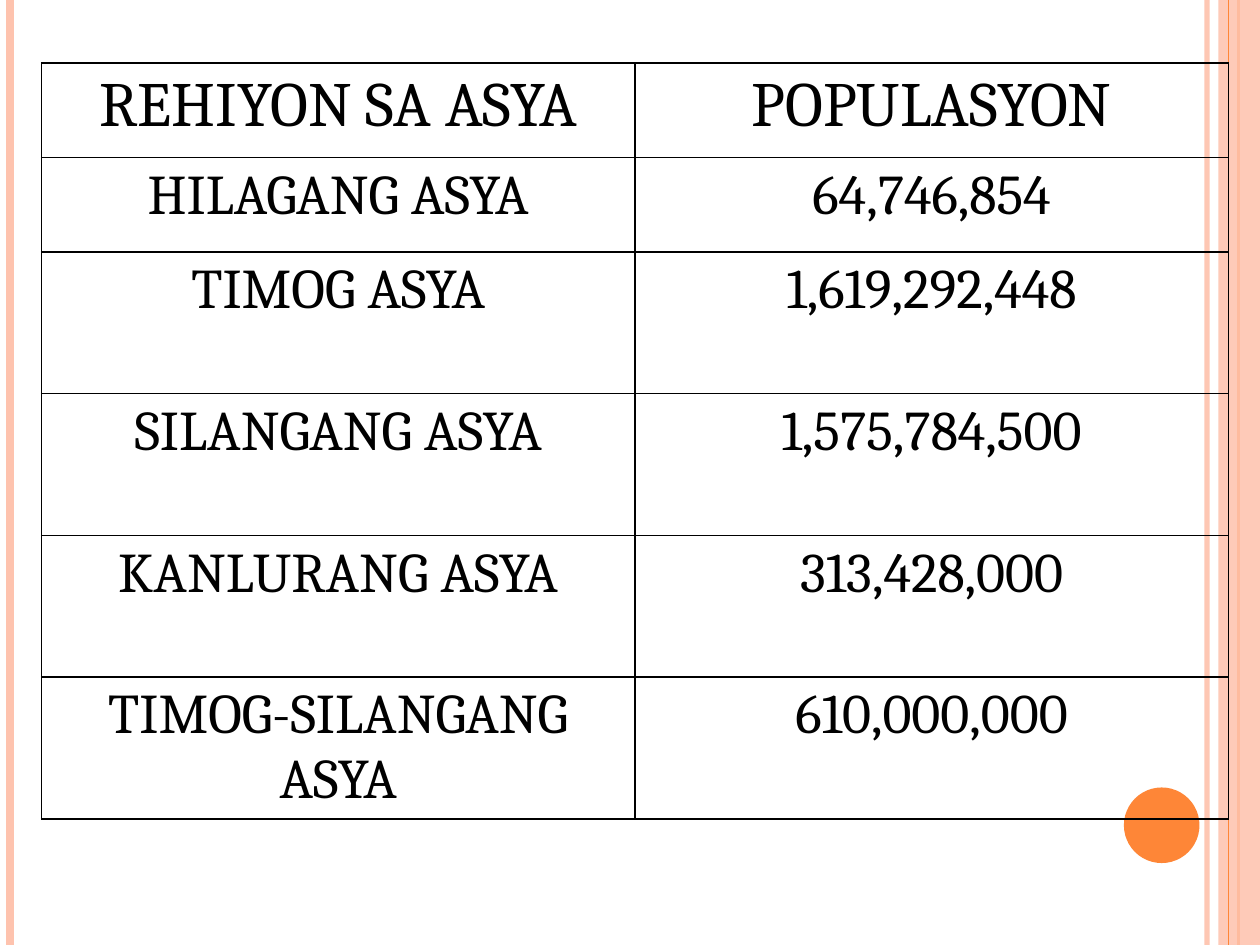
import pptx
import pptx.util
from lxml import etree
from pptx.dml.color import RGBColor
from pptx.enum.shapes import MSO_CONNECTOR, MSO_SHAPE
from pptx.enum.text import PP_ALIGN
from pptx.oxml.ns import qn
from pptx.util import Inches, Pt

PEACH = RGBColor(0xFE, 0xC3, 0xAE)
ORANGE = RGBColor(0xFE, 0x86, 0x37)
BLACK = RGBColor(0, 0, 0)

POPULATION = [
    ("REHIYON SA ASYA", "POPULASYON"),
    ("HILAGANG ASYA", "64,746,854"),
    ("TIMOG ASYA", "1,619,292,448"),
    ("SILANGANG ASYA", "1,575,784,500"),
    ("KANLURANG ASYA", "313,428,000"),
    ("TIMOG-SILANGANG ASYA", "610,000,000"),
]
SLIDE_W, SLIDE_H = 10, 7.5
TABLE_LEFT, TABLE_TOP, TABLE_W, TABLE_H = 0.33, 0.5, 9.42, 6
SHORT_ROWS, SHORT_ROW_H = 2, 0.75
TALL_ROW_H = (TABLE_H - SHORT_ROWS * SHORT_ROW_H) / (len(POPULATION) - SHORT_ROWS)

# x, colour, width in points, opacity in percent
STRIPES_BELOW_BAND = [(9.58, PEACH, 3, 93), (0.08, PEACH, 4.5, 100), (9.83, ORANGE, 1.5, 100)]
STRIPES_ABOVE_BAND = [(9.75, ORANGE, 0.75, 100)]


def set_opacity(shape, percent):
    for color in shape._element.spPr.iter(qn("a:srgbClr")):
        etree.SubElement(color, qn("a:alpha")).set("val", str(percent * 1000))


def add_stripes(slide, stripes):
    for x, color, width, opacity in stripes:
        stripe = slide.shapes.add_connector(
            MSO_CONNECTOR.STRAIGHT, Inches(x), 0, Inches(x), Inches(SLIDE_H))
        stripe.line.color.rgb = color
        stripe.line.width = Pt(width)
        etree.SubElement(stripe._element.spPr, qn("a:effectLst"))
        if opacity < 100:
            set_opacity(stripe, opacity)


def add_filled(slide, kind, box, color):
    shape = slide.shapes.add_shape(kind, *map(Inches, box))
    shape.shadow.inherit = False
    shape.fill.solid()
    shape.fill.fore_color.rgb = color
    shape.line.fill.background()
    return shape


def add_borders(cell):
    """Draw a 1 pt black line on each side of the cell."""
    properties = cell._tc.get_or_add_tcPr()
    for position, side in enumerate(("lnL", "lnR", "lnT", "lnB")):
        border = etree.Element(qn("a:" + side), w=str(Pt(1)))
        fill = etree.SubElement(border, qn("a:solidFill"))
        etree.SubElement(fill, qn("a:srgbClr")).set("val", str(BLACK))
        properties.insert(position, border)


def add_population_table(slide):
    table = slide.shapes.add_table(
        len(POPULATION), 2, Inches(TABLE_LEFT), Inches(TABLE_TOP),
        Inches(TABLE_W), Inches(TABLE_H)).table
    table.first_row = table.horz_banding = False
    for r, entries in enumerate(POPULATION):
        table.rows[r].height = Inches(SHORT_ROW_H if r < SHORT_ROWS else TALL_ROW_H)
        font_format = {"name": "Cambria", "size": Pt(32 if r else 36), "bold": False}
        for c, entry in enumerate(entries):
            cell = table.cell(r, c)
            cell.text = entry
            cell.fill.background()
            add_borders(cell)
            paragraph = cell.text_frame.paragraphs[0]
            paragraph.alignment = PP_ALIGN.CENTER
            font = paragraph.runs[0].font
            for key, value in font_format.items():
                setattr(font, key, value)
            font.color.rgb = BLACK


def main():
    deck = pptx.Presentation()
    deck.slide_width, deck.slide_height = Inches(SLIDE_W), Inches(SLIDE_H)
    slide = deck.slides.add_slide(deck.slide_layouts[6])
    add_stripes(slide, STRIPES_BELOW_BAND)
    band = add_filled(slide, MSO_SHAPE.RECTANGLE, (9.67, 0, 0.33, SLIDE_H), PEACH)
    set_opacity(band, 87)
    add_stripes(slide, STRIPES_ABOVE_BAND)
    add_filled(slide, MSO_SHAPE.OVAL, (8.92, 6.25, 0.6, 0.6), ORANGE)
    add_population_table(slide)
    deck.save("out.pptx")


if __name__ == "__main__":
    main()
